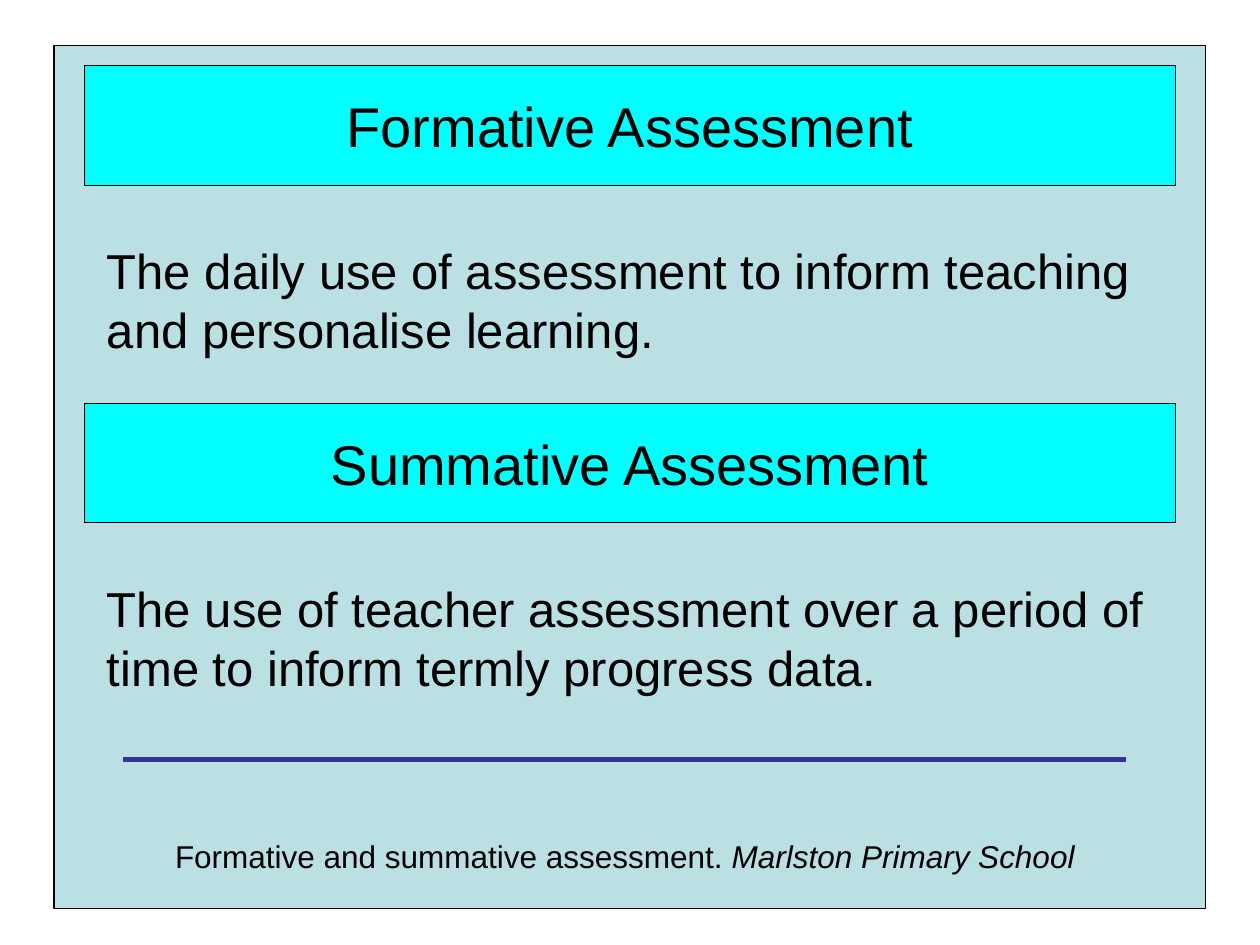
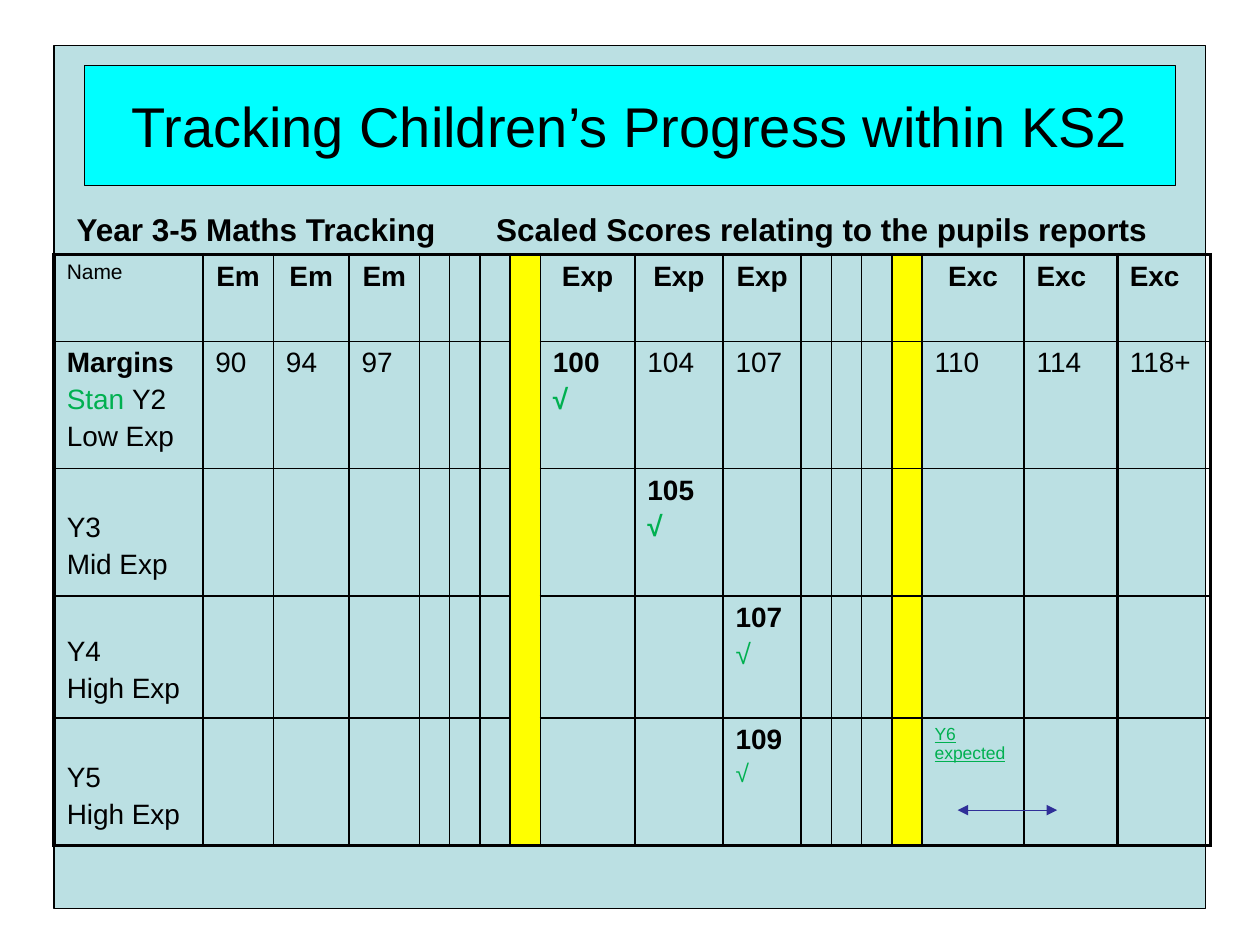
from dataclasses import dataclass

from lxml.etree import SubElement
from pptx import Presentation
from pptx.dml.color import RGBColor
from pptx.enum.shapes import MSO_CONNECTOR, MSO_SHAPE
from pptx.enum.text import MSO_ANCHOR, PP_ALIGN
from pptx.oxml.ns import qn
from pptx.util import Inches, Pt

FONT = "Arial"
BLACK = "000000"
PANEL = "BBE0E3"
BAND = "00FFFF"
YELLOW = "FFFF00"
GREEN = "00B050"
RULE_BLUE = "333399"
ARROW_BLUE = "2F2F98"
THIN, THICK = 1, 2.25


@dataclass
class Run:
    text: str
    size: float = 16
    bold: bool = False
    italic: bool = False
    underline: bool = False
    color: str = BLACK


@dataclass
class Band:
    title: str
    top: float = 0.52


@dataclass
class TextBox:
    left: float
    top: float
    width: float
    height: float
    runs: list[Run]
    align: PP_ALIGN = PP_ALIGN.LEFT


@dataclass
class Entry:
    paragraphs: list[list[Run]]
    align: PP_ALIGN = PP_ALIGN.LEFT
    top_margin: float = 0.05
    gap: float = 3.2


def rgb(value: str) -> RGBColor:
    return RGBColor.from_string(value)


def write_runs(p, runs: list[Run], align: PP_ALIGN) -> None:
    p.alignment = align
    for run in runs:
        r = p.add_run()
        r.text = run.text
        r.font.name = FONT
        r.font.size = Pt(run.size)
        r.font.bold = run.bold
        r.font.italic = run.italic
        r.font.underline = run.underline
        r.font.color.rgb = rgb(run.color)


def add_box(s, left: float, top: float, width: float, height: float, fill: str):
    sp = s.shapes.add_shape(MSO_SHAPE.RECTANGLE, Inches(left), Inches(top), Inches(width), Inches(height))
    sp.shadow.inherit = False
    sp.fill.solid()
    sp.fill.fore_color.rgb = rgb(fill)
    sp.line.color.rgb = rgb(BLACK)
    sp.line.width = Pt(0.75)
    return sp


def add_band(s, band: Band) -> None:
    tf = add_box(s, 0.67, band.top, 8.66, 0.95, BAND).text_frame
    tf.vertical_anchor = MSO_ANCHOR.MIDDLE
    write_runs(tf.paragraphs[0], [Run(band.title, 32)], PP_ALIGN.CENTER)


def add_text(s, box: TextBox):
    sp = s.shapes.add_textbox(Inches(box.left), Inches(box.top), Inches(box.width), Inches(box.height))
    tf = sp.text_frame
    tf.word_wrap = True
    p = tf.paragraphs[0]
    write_runs(p, box.runs, box.align)
    return p


def add_rule(s, left: float, right: float, y: float, color: str, width: float, arrows: bool = False) -> None:
    line = s.shapes.add_connector(MSO_CONNECTOR.STRAIGHT, Inches(left), Inches(y), Inches(right), Inches(y))
    line.line.color.rgb = rgb(color)
    line.line.width = Pt(width)
    if arrows:
        ln = line.line._get_or_add_ln()
        for end in ("a:headEnd", "a:tailEnd"):
            SubElement(ln, qn(end), type="triangle")
    SubElement(line._element.spPr, qn("a:effectLst"))


def add_base_slide(prs, band: Band):
    s = prs.slides.add_slide(prs.slide_layouts[6])
    add_box(s, 0.43, 0.36, 9.14, 6.85, PANEL)
    add_band(s, band)
    return s


def set_borders(cell, left: float, right: float, top: float, bottom: float) -> None:
    tc_pr = cell._tc.get_or_add_tcPr()
    for tag, width in zip(("a:lnL", "a:lnR", "a:lnT", "a:lnB"), (left, right, top, bottom)):
        ln = SubElement(tc_pr, qn(tag), w=str(Pt(width)))
        SubElement(SubElement(ln, qn("a:solidFill")), qn("a:srgbClr"), val=BLACK)


def fill_entry(cell, entry: Entry) -> None:
    cell.margin_top = Inches(entry.top_margin)
    tf = cell.text_frame
    for i, runs in enumerate(entry.paragraphs):
        p = tf.add_paragraph() if i else tf.paragraphs[0]
        if i:
            p.space_before = Pt(entry.gap)
        write_runs(p, runs, entry.align)


def heading(text: str, align: PP_ALIGN = PP_ALIGN.CENTER) -> Entry:
    return Entry([[Run(text, bold=True)]], align)


def year(name: str, level: str, top_margin: float = 0.35) -> Entry:
    return Entry([[Run(name)], [Run(level)]], top_margin=top_margin)


def score(value: str, tick: Run, gap: float = 3.2) -> Entry:
    return Entry([[Run(value, bold=True)], [tick]], gap=gap)


def tracking_entries() -> dict[tuple[int, int], Entry]:
    tick = Run("√", color=GREEN)
    bold_tick = Run("√", bold=True, color=GREEN)
    entries = {
        (0, 0): Entry([[Run("Name", 12)]]),
        (1, 0): Entry([[Run("Margins", bold=True)], [Run("Stan ", color=GREEN), Run("Y2")], [Run("Low Exp")]]),
        (2, 0): year("Y3", "Mid Exp"),
        (3, 0): year("Y4", "High Exp", 0.32),
        (4, 0): year("Y5", "High Exp"),
        (1, 8): score("100", bold_tick),
        (2, 9): score("105", bold_tick),
        (3, 10): score("107", tick),
        (4, 10): score("109", Run("√", 14, color=GREEN), 2.8),
        (4, 15): Entry([[Run("Y6 expected", 10, underline=True, color=GREEN)]]),
    }
    for first, label in ((1, "Em"), (8, "Exp"), (15, "Exc")):
        for col in range(first, first + 3):
            entries[0, col] = heading(label, PP_ALIGN.LEFT if col > 15 else PP_ALIGN.CENTER)
    margins = {1: "90", 2: "94", 3: "97", 9: "104", 10: "107", 15: "110", 16: "114", 17: "118+"}
    for col, value in margins.items():
        entries[1, col] = Entry([[Run(value)]])
    return entries


def add_tracking_table(s) -> None:
    narrow = 0.24
    widths = [1.18, 0.56, 0.6, 0.56, *[narrow] * 4, 0.75, 0.7, 0.62, *[narrow] * 4, 0.81, 0.74, 0.74]
    heights = [0.69, 1.01, 1.01, 0.97, 1.01]
    last_row, last_col = len(heights) - 1, len(widths) - 1
    frame = s.shapes.add_table(
        len(heights), len(widths), Inches(0.43), Inches(2.02), Inches(sum(widths)), Inches(sum(heights))
    )
    table = frame.table
    table.first_row = table.horz_banding = False
    for column, width in zip(table.columns, widths):
        column.width = Inches(width)
    for row, height in zip(table.rows, heights):
        row.height = Inches(height)
    table.cell(0, 7).merge(table.cell(last_row, 7))
    entries = tracking_entries()
    for row in range(len(heights)):
        for col in range(len(widths)):
            cell = table.cell(row, col)
            if cell.is_spanned:
                continue
            set_borders(
                cell,
                THICK if col in (0, last_col) else THIN,
                THICK if col >= last_col - 1 else THIN,
                THICK if row == 0 else THIN,
                THICK if row == last_row or cell.is_merge_origin else THIN,
            )
            if col in (7, 14):
                cell.fill.solid()
                cell.fill.fore_color.rgb = rgb(YELLOW)
            else:
                cell.fill.background()
            if (row, col) in entries:
                fill_entry(cell, entries[row, col])


def build_assessment_slide(prs) -> None:
    s = add_base_slide(prs, Band("Formative Assessment"))
    add_rule(s, 0.98, 8.94, 6.03, RULE_BLUE, 3)
    add_band(s, Band("Summative Assessment", 3.2))
    definitions = (
        (1.86, "The daily use of assessment to inform teaching and personalise learning."),
        (4.54, "The use of teacher assessment over a period of time to inform termly progress data."),
    )
    for top, text in definitions:
        add_text(s, TextBox(0.75, top, 8.58, 1.74, [Run(text, 28)]))
    footer = [Run("Formative and summative assessment. ", 18), Run("Marlston Primary School", 18, italic=True)]
    add_text(s, TextBox(0.51, 6.59, 8.9, 0.4, footer, PP_ALIGN.CENTER))


def build_tracking_slide(prs) -> None:
    s = add_base_slide(prs, Band("Tracking Children’s Progress within KS2"))
    add_tracking_table(s)
    caption = "Year 3-5 Maths Tracking\tScaled Scores relating to the pupils reports"
    p = add_text(s, TextBox(0.51, 1.62, 9.06, 0.4, [Run(caption, 18, bold=True)]))
    tabs = SubElement(p._p.get_or_add_pPr(), qn("a:tabLst"))
    SubElement(tabs, qn("a:tab"), pos=str(Inches(3.33)), algn="l")
    add_rule(s, 7.6, 8.39, 6.43, ARROW_BLUE, 0.75, arrows=True)


def main() -> None:
    prs = Presentation()
    prs.slide_width = Inches(10)
    prs.slide_height = Inches(7.5)
    build_assessment_slide(prs)
    build_tracking_slide(prs)
    prs.save("out.pptx")


if __name__ == "__main__":
    main()
